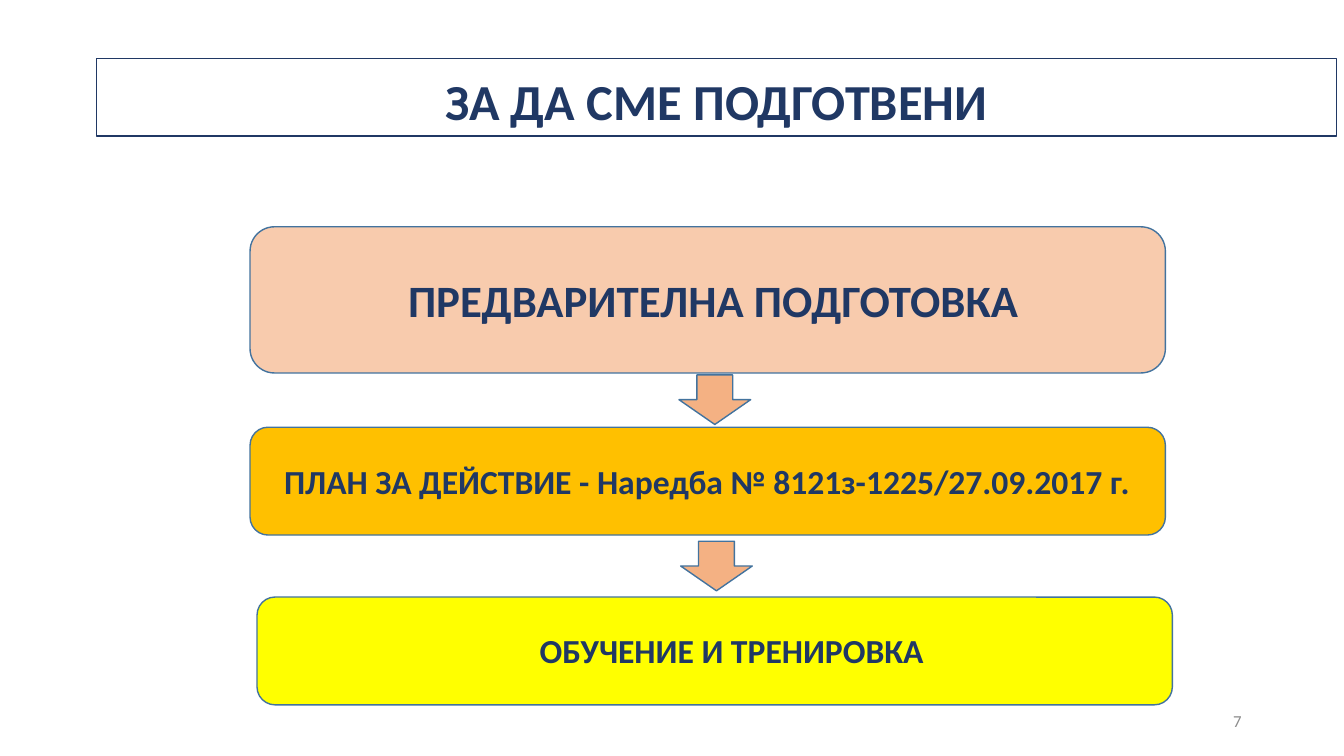
from pptx import Presentation
from pptx.dml.color import RGBColor
from pptx.enum.shapes import MSO_SHAPE as Kind
from pptx.enum.text import MSO_ANCHOR as Anchor, PP_ALIGN as Align
from pptx.util import Pt

NAVY = RGBColor(0x20, 0x38, 0x64)
BLUE = RGBColor(0x43, 0x73, 0x9E)
GREY = RGBColor(0x8C, 0x8C, 0x8C)
WHITE = RGBColor(0xFF, 0xFF, 0xFF)
PEACH = RGBColor(0xF8, 0xCB, 0xAD)
CORAL = RGBColor(0xF4, 0xB1, 0x83)
AMBER = RGBColor(0xFF, 0xC0, 0x00)
YELLOW = RGBColor(0xFF, 0xFF, 0x00)

deck = Presentation()
deck.slide_width, deck.slide_height = Pt(960), Pt(540)
slide = deck.slides.add_slide(deck.slide_layouts[6])


def add_form(kind, left, top, width, height, fill, line=BLUE):
    form = slide.shapes.add_shape(kind, Pt(left), Pt(top), Pt(width), Pt(height))
    form.shadow.inherit = False
    form.fill.solid()
    form.fill.fore_color.rgb = fill
    form.line.color.rgb = line
    form.line.width = Pt(1)
    return form


def write(text, box, size, color=NAVY, bold=True, align=Align.LEFT,
          anchor=Anchor.TOP, spacing=1.0):
    frame = box.text_frame
    frame.word_wrap = True
    frame.vertical_anchor = anchor
    par = frame.paragraphs[0]
    par.alignment = align
    par.line_spacing = spacing
    run = par.add_run()
    run.text = text
    font = run.font
    font.name, font.size, font.bold = "Calibri", Pt(size), bold
    font.color.rgb = color


title = add_form(Kind.RECTANGLE, 69, 41.6, 885.6, 55.6, WHITE, NAVY)
write("ЗА ДА СМЕ ПОДГОТВЕНИ", title, 36, align=Align.CENTER,
      anchor=Anchor.BOTTOM, spacing=0.9)

number = slide.shapes.add_textbox(Pt(678), Pt(500.5), Pt(216), Pt(28.8))
write("7", number, 12, color=GREY, bold=False, align=Align.RIGHT,
      anchor=Anchor.MIDDLE)

# Card left, top, height and fill, then label text, left, top, width, size, align
steps = [
    (178.6, 162, 104.4, PEACH,
     "ПРЕДВАРИТЕЛНА ПОДГОТОВКА", 284.4, 191.5, 454.4, 32, Align.LEFT),
    (178.6, 305.2, 77, AMBER,
     "ПЛАН ЗА ДЕЙСТВИЕ - Наредба № 8121з-1225/27.09.2017 г.",
     195.8, 325.4, 653.8, 24, Align.LEFT),
    (183.6, 426.5, 77, YELLOW,
     "ОБУЧЕНИЕ И ТРЕНИРОВКА", 195.8, 446.4, 653.8, 24, Align.CENTER),
]
for left, top, height, fill, text, x, y, width, size, align in steps:
    add_form(Kind.ROUNDED_RECTANGLE, left, top, 653.8, height, fill)
    label = slide.shapes.add_textbox(Pt(x), Pt(y), Pt(width), Pt(size * 1.5))
    write(text, label, size, align=align)

for left, top in [(485, 267.8), (486.2, 386.6)]:
    add_form(Kind.DOWN_ARROW, left, top, 51.2, 35.4, CORAL)

deck.save("out.pptx")
